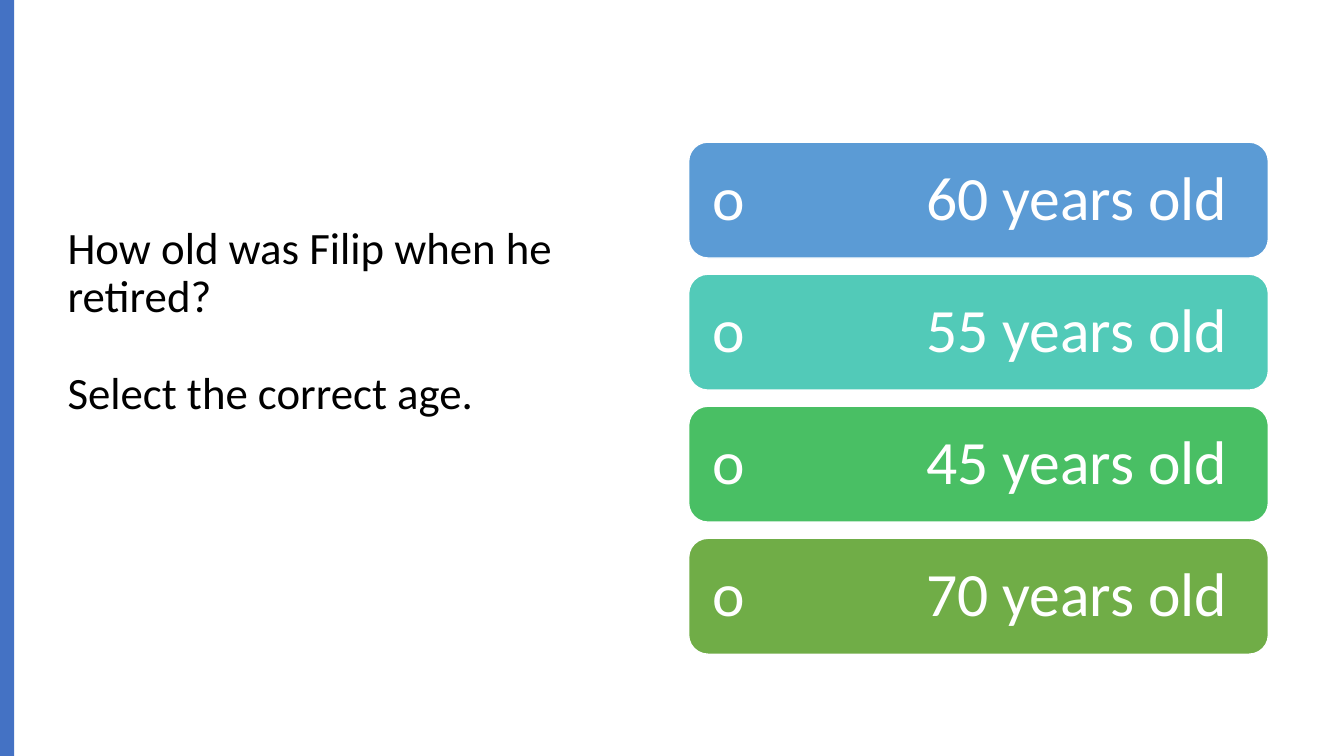
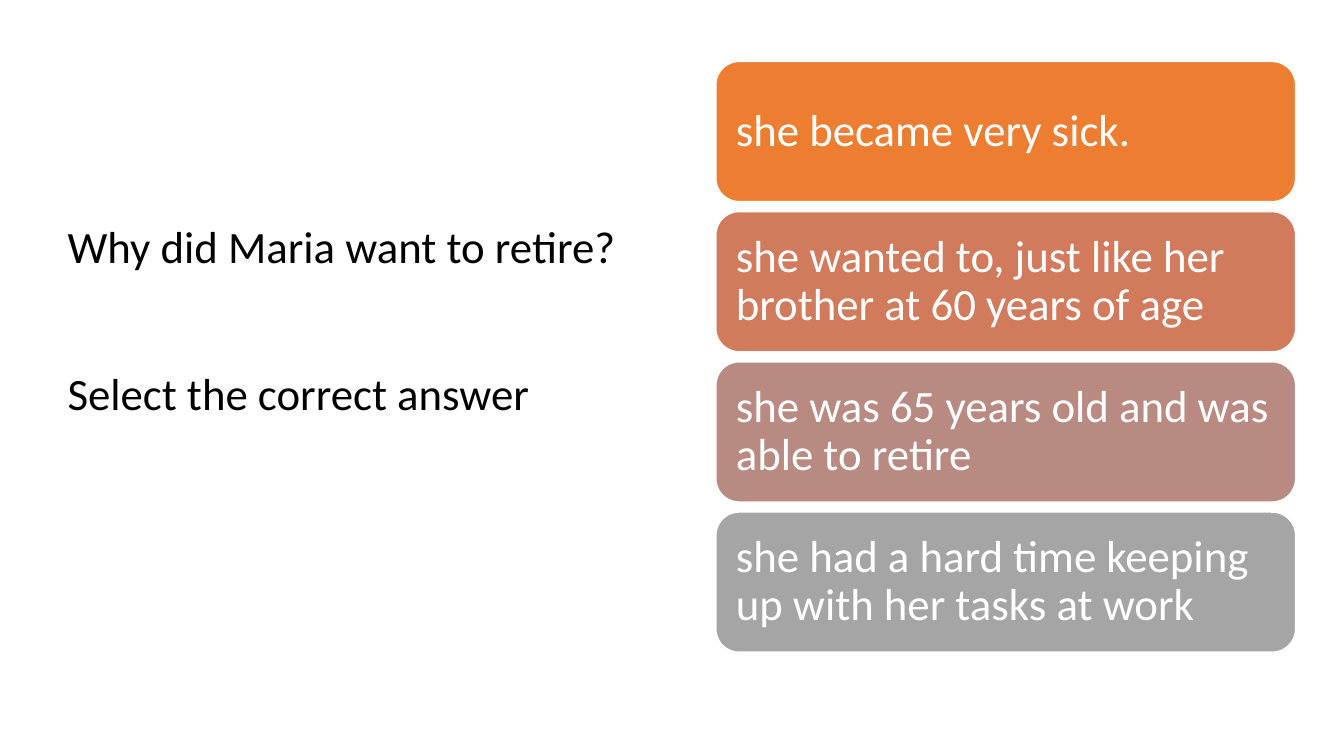
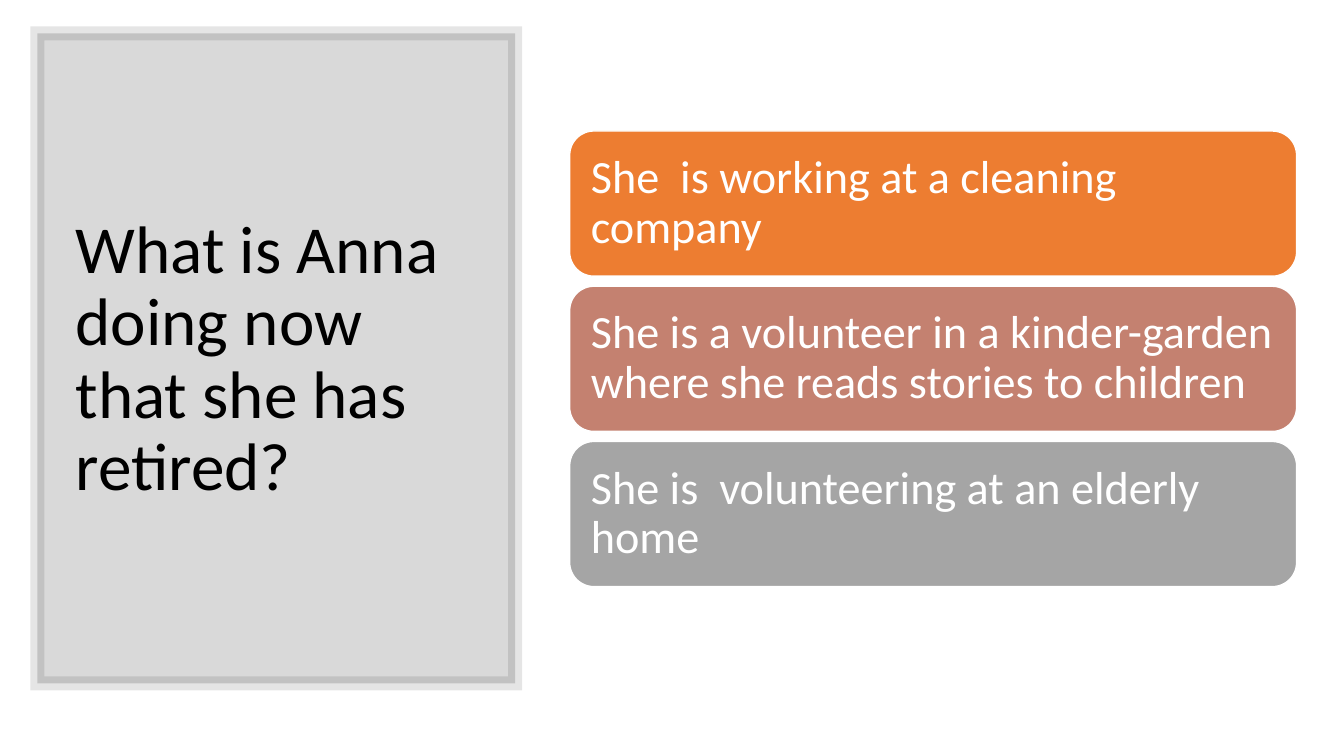
from pptx import Presentation
from pptx.dml.color import RGBColor
from pptx.enum.shapes import MSO_SHAPE
from pptx.enum.text import MSO_ANCHOR, MSO_AUTO_SIZE, PP_ALIGN
from pptx.util import Inches, Pt
from lxml.etree import SubElement
from pptx.oxml.ns import qn
from dataclasses import dataclass


@dataclass(frozen=True)
class Theme:
    font: str = "Calibri"
    ink: str = "000000"
    paper: str = "FFFFFF"
    band: str = "4472C4"
    cool: tuple = ("5B9BD5", "52CAB8", "49BF64", "70AD47")
    warm: tuple = ("ED7D31", "D17B5C", "B98A82", "A5A5A5")
    warm3: tuple = ("ED7D31", "C48170", "A5A5A5")
    ask: int = 32
    head: int = 48
    age: int = 44
    answer: int = 32
    job: int = 33


theme = Theme()


def write(frame, lines, size, color, inset=0.1, top=0.05, bottom=0.05, gap=0, tab=None):
    """Fill a text frame, one paragraph a line, with a gap in points between them."""
    frame.word_wrap = True
    frame.auto_size = MSO_AUTO_SIZE.NONE
    frame.vertical_anchor = MSO_ANCHOR.MIDDLE
    frame.margin_left = frame.margin_right = Inches(inset)
    frame.margin_top, frame.margin_bottom = Inches(top), Inches(bottom)
    for i, line in enumerate(lines):
        para = frame.paragraphs[0] if i == 0 else frame.add_paragraph()
        para.alignment = PP_ALIGN.LEFT
        para.line_spacing = 0.9
        para.space_before = Pt(gap if i else 0)
        run = para.add_run()
        run.text = line
        run.font.name = theme.font
        run.font.size = Pt(size)
        run.font.color.rgb = RGBColor.from_string(color)
        if tab:
            stops = SubElement(para._p.get_or_add_pPr(), qn("a:tabLst"))
            SubElement(stops, qn("a:tab"), pos=str(Inches(tab)), algn="l")


def block(slide, kind, box, fill, line=None, width=1):
    """Add a plain shape without shadow."""
    shape = slide.shapes.add_shape(kind, *map(Inches, box))
    shape.shadow.inherit = False
    shape.fill.solid()
    shape.fill.fore_color.rgb = RGBColor.from_string(fill)
    if line:
        shape.line.color.rgb = RGBColor.from_string(line)
        shape.line.width = Pt(width)
    else:
        shape.line.fill.background()
    return shape


# Questions and their answer cards; first is the top card, step the pitch
left = (0.57, 0.68, 5.67, 6.02)
quiz = [
    dict(title=["How old was Filip when he retired?", "Select the correct age."],
         box=left, size=theme.ask, gap=35, bottom=1.03,
         cards=["o\t60 years old", "o\t55 years old", "o\t45 years old", "o\t70 years old"],
         fills=theme.cool, first=(6.83, 1.41, 5.75, 1.15), step=1.31,
         type=theme.age, inset=0.18, tab=2.12),
    dict(title=["Why did Maria want to retire?", "Select the correct answer"],
         box=left, size=theme.ask, gap=70, bottom=1.03,
         cards=["she became very sick.",
                "she wanted to, just like her brother at 60 years of age",
                "she was 65 years old and was able to retire",
                "she had a hard time keeping up with her tasks at work"],
         fills=theme.warm, first=(7.1, 0.61, 5.75, 1.39), step=1.49,
         type=theme.answer, inset=0.13, tab=None),
    dict(title=["What is Anna doing now that she has retired?"],
         box=(0.65, 0.7, 4.16, 5.75), size=theme.head, gap=0, bottom=0.05,
         cards=["She  is working at a cleaning company",
                "She is a volunteer in a kinder-garden where she reads stories to children",
                "She is  volunteering at an elderly home"],
         fills=theme.warm3, first=(5.65, 1.3, 7.21, 1.44), step=1.54,
         type=theme.job, inset=0.14, tab=None),
]

deck = Presentation()
deck.slide_width, deck.slide_height = Inches(13.33), Inches(7.5)
slides = []

for item in quiz:
    slide = deck.slides.add_slide(deck.slide_layouts[5])
    slides.append(slide)

    # Question
    title = slide.shapes.title
    title.left, title.top, title.width, title.height = map(Inches, item["box"])
    write(title.text_frame, item["title"], item["size"], theme.ink,
          gap=item["gap"], bottom=item["bottom"])

    # Answer cards
    x, y, w, h = item["first"]
    inset = item["inset"]
    for row, (text, fill) in enumerate(zip(item["cards"], item["fills"])):
        card = block(slide, MSO_SHAPE.ROUNDED_RECTANGLE,
                     (x, y + row * item["step"], w, h), fill, theme.paper)
        write(card.text_frame, [text], item["type"], theme.paper,
              inset=inset, top=inset, bottom=inset, tab=item["tab"])

# Side band on the first slide
block(slides[0], MSO_SHAPE.RECTANGLE, (0, 0, 0.14, 7.5), theme.band)

# Translucent frame behind the last question
panel = block(slides[2], MSO_SHAPE.RECTANGLE, (0.37, 0.33, 4.74, 6.45),
              theme.ink, theme.ink, 10)
props = panel._element.spPr
edge = props.find(qn("a:ln"))
for part, alpha in ((props, 15), (edge, 10)):
    tint = part.find(qn("a:solidFill")).find(qn("a:srgbClr"))
    SubElement(tint, qn("a:alpha"), val=str(alpha * 1000))
SubElement(edge, qn("a:miter"), lim="800000")
slides[2].shapes._spTree.insert(2, panel._element)

deck.save("out.pptx")
